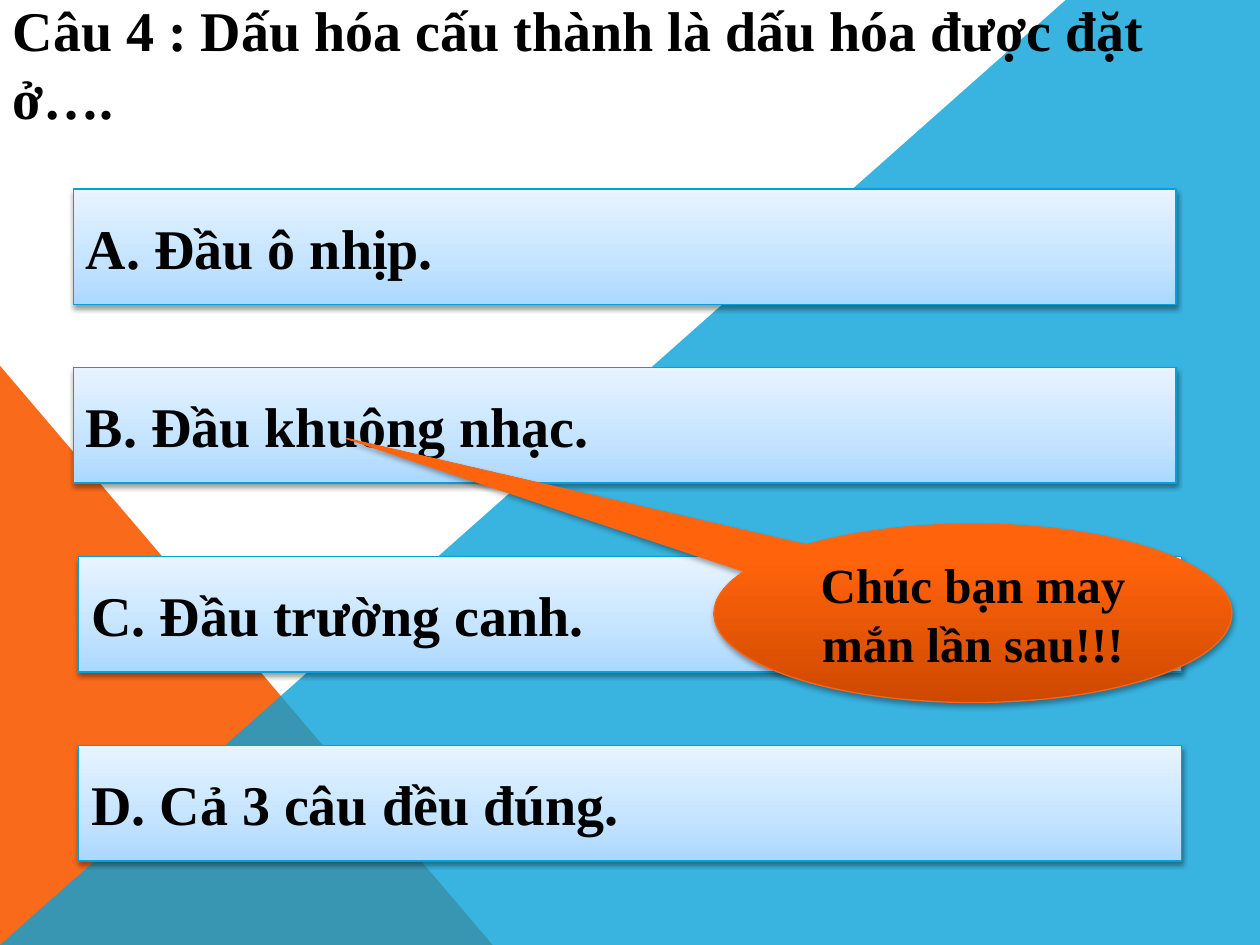
from dataclasses import dataclass

from lxml.etree import SubElement
from pptx import Presentation
from pptx.dml.color import RGBColor
from pptx.enum.shapes import MSO_SHAPE
from pptx.enum.text import MSO_ANCHOR, MSO_AUTO_SIZE, PP_ALIGN
from pptx.oxml.ns import qn
from pptx.util import Pt


@dataclass(frozen=True)
class Theme:
    font: str = "Times New Roman"
    ink: str = "000000"
    orange: str = "F96A1B"
    blue: str = "08A1D9"
    edge: str = "03A0D9"
    rim: str = "F96615"
    sky: tuple = ((0, "ABD8FF"), (35, "C3E3FF"), (100, "E8F4FF"))
    fire: tuple = ((0, "CE4900"), (80, "FF630C"), (100, "FF640E"))
    large: int = 32
    small: int = 28


def write(shape, text, size, font, color, align=PP_ALIGN.LEFT):
    """Put one bold, vertically centred paragraph into a shape."""
    frame = shape.text_frame
    frame.word_wrap = True
    frame.auto_size = MSO_AUTO_SIZE.NONE
    frame.vertical_anchor = MSO_ANCHOR.MIDDLE
    para = frame.paragraphs[0]
    para.alignment = align
    run = para.add_run()
    run.text = text
    run.font.name, run.font.size, run.font.bold = font, Pt(size), True
    run.font.color.rgb = RGBColor.from_string(color)


def tint(parent, color, alpha=None):
    """Add an RGB colour element, with opacity in percent."""
    node = SubElement(parent, qn("a:srgbClr"), val=color)
    if alpha is not None:
        SubElement(node, qn("a:alpha"), val=str(alpha * 1000))


class Deck:
    def __init__(self, theme, slide):
        self.theme = theme
        self.slide = slide
        self.shapes = slide.shapes

    def plain(self, shape, color, alpha=None):
        """Flat fill without line or shadow."""
        shape.shadow.inherit = False
        shape.line.fill.background()
        shape.fill.solid()
        shape.fill.fore_color.rgb = RGBColor.from_string(color)
        if alpha is not None:
            fill = shape.fill._xPr.find(qn("a:solidFill"))
            fill.clear()
            tint(fill, color, alpha)

    def wedge(self, box, color):
        shape = self.shapes.add_shape(
            MSO_SHAPE.RIGHT_TRIANGLE, *map(Pt, box))
        self.plain(shape, color)

    def outline(self, points, color, alpha):
        pen = self.shapes.build_freeform(*points[0], scale=Pt(1))
        pen.add_line_segments(points[1:], close=True)
        self.plain(pen.convert_to_shape(), color, alpha)

    def title(self, text, box):
        shape = self.shapes.title
        shape.left, shape.top, shape.width, shape.height = map(Pt, box)
        write(shape, text, self.theme.large, self.theme.font, self.theme.ink)
        # Bring the title in front of the backdrop
        self.shapes._spTree.append(shape._element)

    def glossy(self, kind, box, stops, edge, shade):
        """Shape with an upward gradient, thin line and soft shadow."""
        shape = self.shapes.add_shape(kind, *map(Pt, box))
        shape.line.color.rgb = RGBColor.from_string(edge)
        shape.line.width = Pt(0.75)
        shape.fill.gradient()
        shape.fill.gradient_angle = 90
        props = shape._element.spPr
        ramp = props.find(qn("a:gradFill")).find(qn("a:gsLst"))
        ramp.clear()
        for pos, color in stops:
            tint(SubElement(ramp, qn("a:gs"), pos=str(pos * 1000)), color)
        # Shadow straight below
        shape.shadow.inherit = False
        cast = SubElement(
            props.find(qn("a:effectLst")), qn("a:outerShdw"),
            blurRad=str(Pt(3.1)), dist=str(Pt(1.6)), dir="5400000",
            rotWithShape="0")
        tint(cast, self.theme.ink, shade)
        return shape

    def answer(self, text, box):
        look = self.theme
        shape = self.glossy(MSO_SHAPE.RECTANGLE, box, look.sky, look.edge, 38)
        write(shape, text, look.large, look.font, look.ink)

    def callout(self, text, box, tip):
        look = self.theme
        shape = self.glossy(
            MSO_SHAPE.OVAL_CALLOUT, box, look.fire, look.rim, 35)
        shape.adjustments[0], shape.adjustments[1] = tip
        write(shape, text, look.small, look.font, look.ink, PP_ALIGN.CENTER)


def main():
    show = Presentation()
    show.slide_width, show.slide_height = Pt(720), Pt(540)
    look = Theme()
    deck = Deck(look, show.slides.add_slide(show.slide_layouts[5]))

    # Backdrop
    deck.wedge((0, 209, 281.5, 331), look.orange)
    deck.outline([(0, 540), (609, 0), (720, 0), (720, 540)], look.blue, 80)

    # Question
    deck.title("Câu 4 : Dấu hóa cấu thành là dấu hóa được đặt ở….",
               (0, 0, 720, 72))

    # Answers
    answers = (
        ("A. Đầu ô nhịp.", 42, 108),
        ("B. Đầu khuông nhạc.", 42, 210),
        ("C. Đầu trường canh.", 45, 318),
        ("D. Cả 3 câu đều đúng.", 45, 426),
    )
    for text, left, top in answers:
        deck.answer(text, (left, top, 630, 66))

    # Feedback bubble
    deck.callout("Chúc bạn may mắn lần sau!!!",
                 (408, 299.5, 296, 102), (-1.21, -0.98))

    show.save("out.pptx")


if __name__ == "__main__":
    main()
